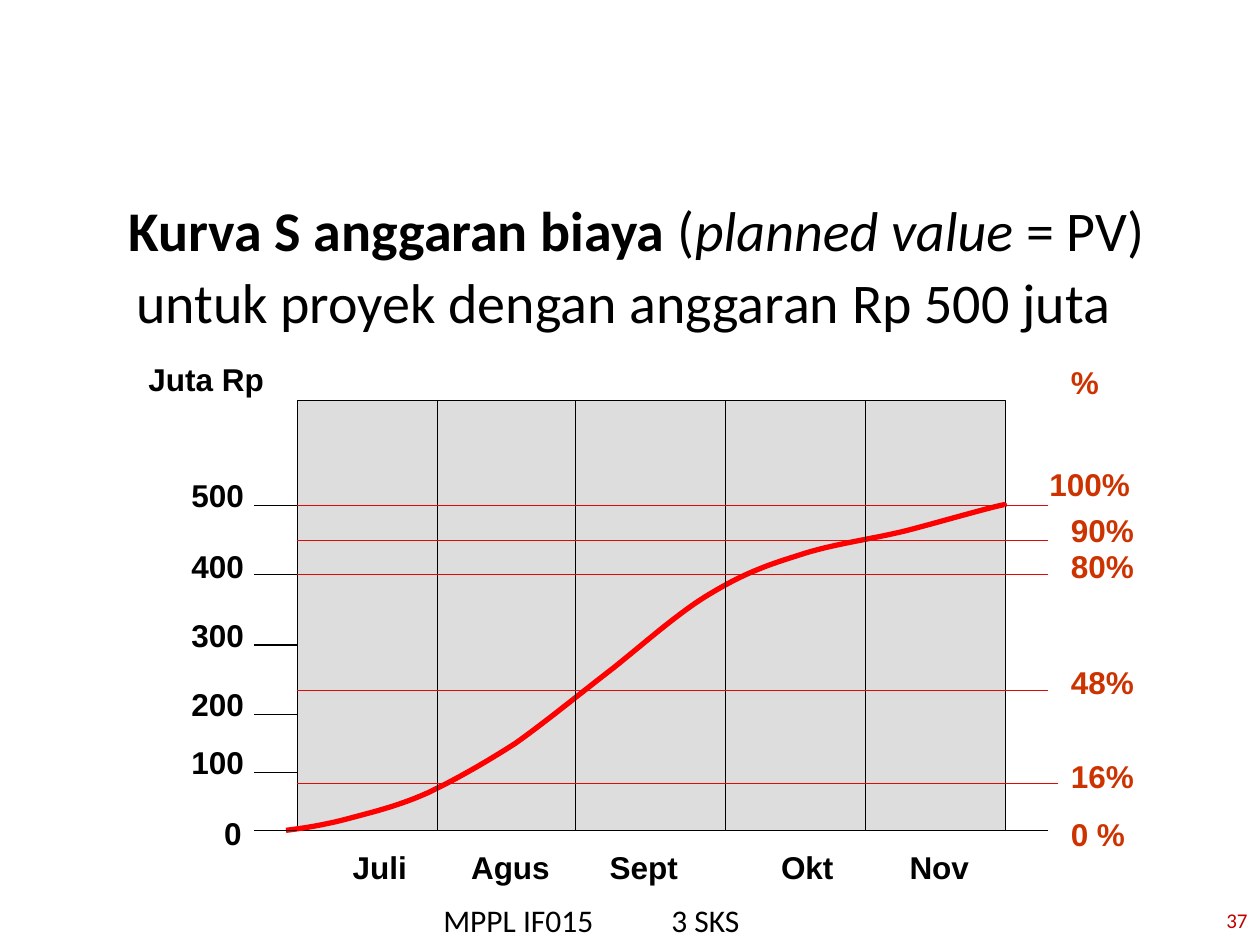
from lxml import etree
from pptx import Presentation
from pptx import util as u
from pptx.dml.color import RGBColor
from pptx.enum import shapes, text
from pptx.oxml import ns

PX = u.Inches(1) // 100  # 100 px to the inch

BLACK = RGBColor(0x00, 0x00, 0x00)
GREY = RGBColor(0xDD, 0xDD, 0xDD)
RED = RGBColor(0xFF, 0x00, 0x00)
GRID_RED = RGBColor(0xDF, 0x0A, 0x05)
PERCENT_RED = RGBColor(0xCC, 0x33, 0x00)
NUMBER_RED = RGBColor(0xC0, 0x00, 0x00)

LABEL_HEIGHT = 40
LEFT, TOP, RIGHT, BOTTOM = 236, 318, 798, 659  # plot area
TICK_LEFT, GRID_RIGHT = 202, 832

# Cubic Bezier points: a start, then two handles and an end per piece
S_CURVE = [
    (227, 659),
    (244, 657), (261, 654), (279, 649),
    (298, 644), (318, 639), (340, 629),
    (361, 619), (384, 606), (409, 590),
    (433, 573), (461, 550), (487, 530),
    (512, 510), (540, 485), (564, 471),
    (589, 456), (607, 449), (633, 441),
    (659, 432), (692, 428), (720, 421),
    (747, 414), (802, 398), (797, 401),
]


def bezier_points(points, steps=16):
    """Points along a chain of cubic Bezier pieces, without the start."""
    for i in range(0, len(points) - 1, 3):
        for step in range(1, steps + 1):
            t = step / steps
            weights = ((1 - t) ** 3, 3 * t * (1 - t) ** 2,
                       3 * t ** 2 * (1 - t), t ** 3)
            yield tuple(sum(w * p[axis] for w, p in zip(weights, points[i:i + 4]))
                        for axis in (0, 1))


class Painter:
    def __init__(self, page):
        self.shapes = page.shapes

    def style(self, span, size, color, font, bold=False, italic=False):
        span.font.size = u.Pt(size)
        span.font.color.rgb = color
        span.font.name = font
        span.font.bold = bold
        span.font.italic = italic

    def box(self, left, top, width, height):
        box = self.shapes.add_textbox(*(v * PX for v in (left, top, width, height)))
        box.text_frame.word_wrap = True
        return box.text_frame

    def text(self, words, left, top, width, height=LABEL_HEIGHT, size=18,
             color=BLACK, font="Calibri", bold=False):
        frame = self.box(left, top, width, height)
        frame.text = words
        self.style(frame.paragraphs[0].runs[0], size, color, font, bold)
        return frame

    def label(self, words, left, top, width, color=BLACK):
        self.text(words, left, top, width, color=color, font="Arial", bold=True)

    def rectangle(self, left, top, right, bottom, fill):
        area = self.shapes.add_shape(
            shapes.MSO_SHAPE.RECTANGLE, left * PX, top * PX,
            (right - left) * PX, (bottom - top) * PX)
        area.shadow.inherit = False
        area.fill.solid()
        area.fill.fore_color.rgb = fill
        area.line.color.rgb = BLACK
        area.line.width = u.Pt(0.75)

    def line(self, x1, y1, x2, y2, color=BLACK):
        line = self.shapes.add_connector(
            shapes.MSO_CONNECTOR.STRAIGHT, x1 * PX, y1 * PX, x2 * PX, y2 * PX)
        line.line.color.rgb = color
        line.line.width = u.Pt(0.75)
        etree.SubElement(line._element.spPr, ns.qn("a:effectLst"))

    def curve(self, points, color, width):
        builder = self.shapes.build_freeform(
            points[0][0] * PX, points[0][1] * PX)
        builder.add_line_segments(
            [(x * PX, y * PX) for x, y in bezier_points(points)], close=False)
        curve = builder.convert_to_shape()
        curve.shadow.inherit = False
        curve.fill.background()
        curve.line.color.rgb = color
        curve.line.width = u.Pt(width)


def draw_heading(painter):
    frame = painter.box(50, 150, 900, 117)
    first = frame.paragraphs[0]
    for words, bold, italic in ((" Kurva S anggaran biaya ", True, False),
                                ("(", False, False),
                                ("planned value", False, True),
                                (" = PV)", False, False)):
        span = first.add_run()
        span.text = words
        painter.style(span, 32, BLACK, "Calibri", bold, italic)
    second = frame.add_paragraph()
    second.text = "untuk proyek dengan anggaran Rp 500 juta "
    second.space_before = u.Pt(3)
    painter.style(second.runs[0], 32, BLACK, "Calibri")
    for para in frame.paragraphs:
        para.alignment = text.PP_ALIGN.CENTER


def draw_footer(painter):
    number = painter.text("37", 767, 710, 233, size=12, color=NUMBER_RED)
    number.vertical_anchor = text.MSO_ANCHOR.MIDDLE
    number.paragraphs[0].alignment = text.PP_ALIGN.RIGHT

    course = painter.text("MPPL IF015\t3 SKS", 342, 710, 317)
    properties = course.paragraphs[0]._p.get_or_add_pPr()
    tabs = etree.SubElement(properties, ns.qn("a:tabLst"))
    etree.SubElement(tabs, ns.qn("a:tab"), pos=str(181 * PX), algn="l")


def draw_chart(painter):
    # Plot area and curve
    painter.rectangle(LEFT, TOP, RIGHT, BOTTOM, GREY)
    painter.curve(S_CURVE, RED, 3)

    # Months
    for x in (347, 457, 576, 687):
        painter.line(x, BOTTOM, x, TOP)
    for month, x in (("Juli", 270), ("Agus", 364), ("Sept", 474),
                     ("Okt", 610), ("Nov", 712)):
        painter.label(month, x, 668, 102)

    # Percentages: words, label left and top, grid line height and right end
    for words, x, top, y, right in (("100%", 823, 364, 401, GRID_RIGHT),
                                    ("90%", 840, 401, 429, GRID_RIGHT),
                                    ("80%", 840, 429, 456, GRID_RIGHT),
                                    ("48%", 840, 521, 548, GRID_RIGHT),
                                    ("16%", 840, 596, 622, 840)):
        painter.line(right, y, LEFT, y, GRID_RED)
        painter.label(words, x, top, 94, PERCENT_RED)
    painter.line(GRID_RIGHT, BOTTOM, RIGHT, BOTTOM)
    painter.label("0 %", 840, 642, 77, PERCENT_RED)
    painter.label("%", 840, 283, 51, PERCENT_RED)

    # Budget in millions: words, label left and top, tick height
    for words, x, top, y in (("500", 142, 373, 401), ("400", 142, 429, 456),
                             ("300", 142, 484, 512), ("200", 142, 539, 567),
                             ("100", 142, 585, 613), ("0", 168, 641, BOTTOM)):
        painter.line(LEFT, y, TICK_LEFT, y)
        painter.label(words, x, top, 70)
    painter.label("Juta Rp", 108, 281, 119)


def main():
    deck = Presentation()
    deck.slide_width, deck.slide_height = 1000 * PX, 750 * PX
    painter = Painter(deck.slides.add_slide(deck.slide_layouts[6]))
    draw_heading(painter)
    draw_footer(painter)
    draw_chart(painter)
    deck.save("out.pptx")


if __name__ == "__main__":
    main()
